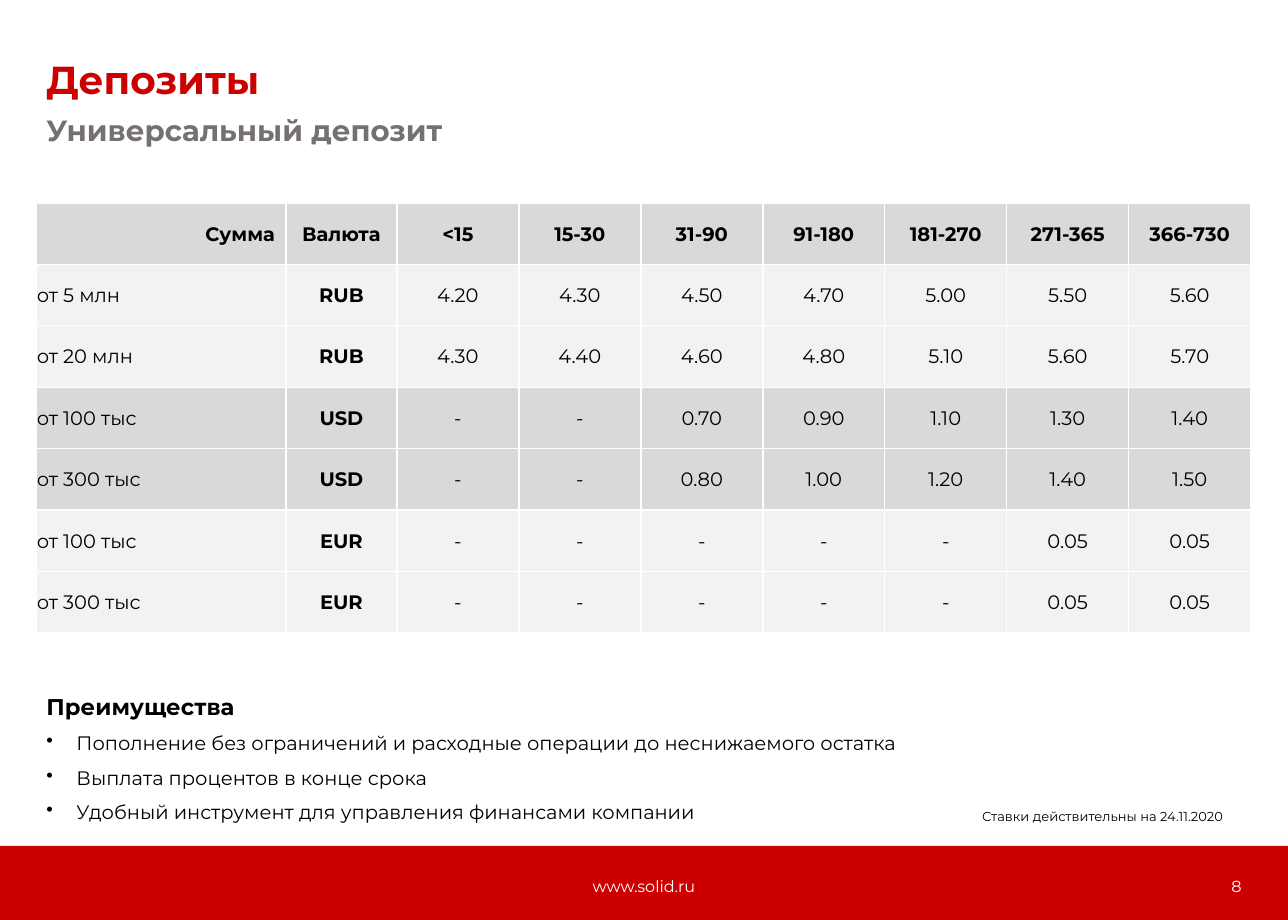
"""Builds the slide on deposit rates."""
from dataclasses import dataclass

from lxml import etree
from pptx import Presentation
from pptx.dml.color import RGBColor
from pptx.enum.shapes import MSO_SHAPE
from pptx.enum.text import MSO_ANCHOR, PP_ALIGN
from pptx.oxml.ns import qn
from pptx.util import Pt

RECTANGLE = MSO_SHAPE.RECTANGLE
TOP, MIDDLE = MSO_ANCHOR.TOP, MSO_ANCHOR.MIDDLE
LEFT, CENTER, RIGHT = PP_ALIGN.LEFT, PP_ALIGN.CENTER, PP_ALIGN.RIGHT
EMU_PER_PX = 7822
SLIDE_WIDTH, SLIDE_HEIGHT = 1288, 920


@dataclass(frozen=True)
class Theme:
    font: str = "Montserrat"
    red: str = "CC0000"
    gray: str = "767171"
    black: str = "000000"
    white: str = "FFFFFF"
    dark_row: str = "D9D9D9"
    light_row: str = "F2F2F2"
    title: float = 24
    subtitle: float = 18
    heading: float = 14
    body: float = 12
    footer: float = 9.9
    note: float = 8
    space_before: float = 8.3
    line_spacing: float = 0.9
    border: float = 1


HEADER = ["Сумма", "Валюта", "<15", "15-30", "31-90", "91-180", "181-270", "271-365", "366-730"]
RATES = [
    ["от 5 млн", "RUB", "4.20", "4.30", "4.50", "4.70", "5.00", "5.50", "5.60"],
    ["от 20 млн", "RUB", "4.30", "4.40", "4.60", "4.80", "5.10", "5.60", "5.70"],
    ["от 100 тыс", "USD", "-", "-", "0.70", "0.90", "1.10", "1.30", "1.40"],
    ["от 300 тыс", "USD", "-", "-", "0.80", "1.00", "1.20", "1.40", "1.50"],
    ["от 100 тыс", "EUR", "-", "-", "-", "-", "-", "0.05", "0.05"],
    ["от 300 тыс", "EUR", "-", "-", "-", "-", "-", "0.05", "0.05"],
]
COLUMN_WIDTHS = [250, 111] + [122] * 7
BENEFITS = [
    "Пополнение без ограничений и расходные операции до неснижаемого остатка",
    "Выплата процентов в конце срока",
    "Удобный инструмент для управления финансами компании",
]


def px(length):
    return length * EMU_PER_PX


class SlideBuilder:
    def __init__(self, page, theme):
        self.page = page
        self.theme = theme

    def style(self, para, size, color, bold=False, align=LEFT):
        para.alignment = align
        font = para.font
        font.name = self.theme.font
        font.size = Pt(size)
        font.bold = bold
        font.color.rgb = RGBColor.from_string(color)

    def bar(self, left, top, width, height, color):
        bar = self.page.shapes.add_shape(RECTANGLE, px(left), px(top), px(width), px(height))
        bar.shadow.inherit = False
        bar.fill.solid()
        bar.fill.fore_color.rgb = RGBColor.from_string(color)
        bar.line.fill.background()

    def text(self, left, top, width, height, words, size, color,
             bold=False, align=LEFT, anchor=TOP, spacing=None):
        box = self.page.shapes.add_textbox(px(left), px(top), px(width), px(height))
        frame = box.text_frame
        frame.word_wrap = True
        frame.vertical_anchor = anchor
        para = frame.paragraphs[0]
        para.text = words
        para.line_spacing = spacing
        self.style(para, size, color, bold, align)
        return frame

    def bullets(self, frame, items, indent):
        for item in items:
            para = frame.add_paragraph()
            para.text = item
            para.line_spacing = self.theme.line_spacing
            para.space_before = Pt(self.theme.space_before)
            properties = para._p.get_or_add_pPr()
            properties.set("marL", str(px(indent)))
            properties.set("indent", str(-px(indent)))
            etree.SubElement(properties, qn("a:buChar"), char="•")
            self.style(para, self.theme.body, self.theme.black)

    def borders(self, cell):
        properties = cell._tc.get_or_add_tcPr()
        for side in ("lnL", "lnR", "lnT", "lnB"):
            line = etree.SubElement(properties, qn(f"a:{side}"), w=str(Pt(self.theme.border)))
            fill = etree.SubElement(line, qn("a:solidFill"))
            etree.SubElement(fill, qn("a:srgbClr"), val=self.theme.white)

    def cell(self, cell, words, color, bold, align, right_margin):
        self.borders(cell)
        cell.fill.solid()
        cell.fill.fore_color.rgb = RGBColor.from_string(color)
        cell.vertical_anchor = MIDDLE
        cell.margin_left = cell.margin_top = px(1)
        cell.margin_right = px(right_margin)
        cell.margin_bottom = 0
        para = cell.text_frame.paragraphs[0]
        para.text = words
        self.style(para, self.theme.body, self.theme.black, bold, align)

    def table(self, left, top, height, rows, widths):
        table = self.page.shapes.add_table(
            len(rows), len(widths), px(left), px(top), px(sum(widths)), px(height)).table
        table.first_row = table.horz_banding = False
        for column, width in zip(table.columns, widths):
            column.width = px(width)
        for row_index, row in enumerate(rows):
            is_header = row_index == 0
            is_dark = is_header or row[1] == "USD"
            color = self.theme.dark_row if is_dark else self.theme.light_row
            for column_index, words in enumerate(row):
                is_amount = column_index == 0
                amount_align = RIGHT if is_header else LEFT
                self.cell(table.cell(row_index, column_index), words, color,
                          bold=is_header or column_index == 1,
                          align=amount_align if is_amount else CENTER,
                          right_margin=11 if is_amount else 1)


def main():
    deck = Presentation()
    deck.slide_width, deck.slide_height = px(SLIDE_WIDTH), px(SLIDE_HEIGHT)
    theme = Theme()
    spacing = theme.line_spacing
    slide = SlideBuilder(deck.slides.add_slide(deck.slide_layouts[6]), theme)

    slide.bar(0, 846, SLIDE_WIDTH, SLIDE_HEIGHT - 846, theme.red)
    slide.text(35, 55, 1217, 80, "Депозиты", theme.title, theme.red, True, spacing=spacing)
    slide.text(35, 111, 1189, 80, "Универсальный депозит", theme.subtitle, theme.gray, True,
               spacing=spacing)
    slide.table(36, 203, 430, [HEADER] + RATES, COLUMN_WIDTHS)
    benefits = slide.text(35, 690, 1217, 151, "Преимущества", theme.heading, theme.black, True,
                          spacing=spacing)
    slide.bullets(benefits, BENEFITS, 30)
    slide.text(963, 805, 272, 34, "Ставки действительны на 24.11.2020", theme.note, theme.black,
               align=RIGHT, spacing=spacing)
    slide.text(427, 862, 434, 49, "www.solid.ru", theme.footer, theme.white,
               align=CENTER, anchor=MIDDLE)
    slide.text(963, 862, 290, 49, "8", theme.footer, theme.white, align=RIGHT, anchor=MIDDLE)

    deck.save("out.pptx")


if __name__ == "__main__":
    main()
